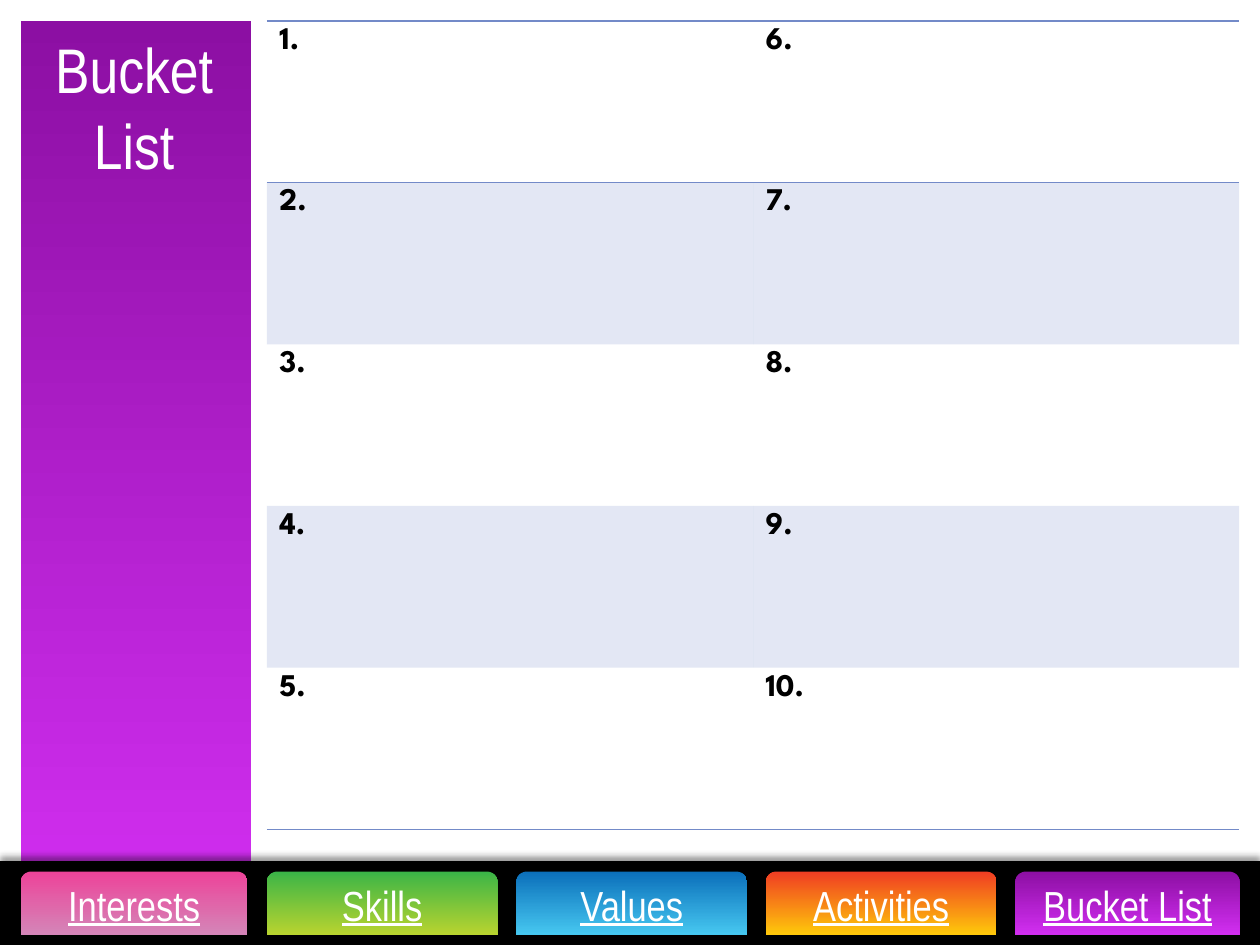
from lxml import etree
from pptx import Presentation
from pptx.dml.color import RGBColor
from pptx.enum import shapes, text
from pptx.oxml import parse_xml
from pptx.oxml.ns import nsdecls, qn
from pptx.util import Cm, Pt

BLACK = RGBColor(0x00, 0x00, 0x00)
WHITE = RGBColor(0xFF, 0xFF, 0xFF)
BLUE = RGBColor(0x73, 0x8A, 0xC8)
PURPLE = RGBColor(0x8C, 0x0F, 0xA3), RGBColor(0xD1, 0x2E, 0xF0)
PINK = RGBColor(0xED, 0x43, 0x99), RGBColor(0xD4, 0x85, 0xB8)
GREEN = RGBColor(0x3A, 0xB4, 0x47), RGBColor(0xB9, 0xD4, 0x2F)
SKY = RGBColor(0x0B, 0x6F, 0xBA), RGBColor(0x46, 0xC7, 0xF0)
ORANGE = RGBColor(0xF0, 0x3C, 0x23), RGBColor(0xFE, 0xC8, 0x0A)
NO_STYLE = "{2D5ABB26-0587-4C30-8999-92F81FD0307C}"


def add_box(kind, x, y, w, h, colors):
    """Add a borderless shape, with a downward gradient if given two colours."""
    sp = s.shapes.add_shape(kind, Cm(x), Cm(y), Cm(w), Cm(h))
    sp.shadow.inherit = False
    sp.line.fill.background()
    if len(colors) == 1:
        sp.fill.solid()
        sp.fill.fore_color.rgb = colors[0]
    else:
        sp.fill.gradient()
        sp.fill.gradient_angle = 270
        for stop, color, pos in zip(sp.fill.gradient_stops, colors, (0, 1)):
            stop.color.rgb = color
            stop.position = pos
    return sp


def write(tf, words, size, font, color):
    p = tf.paragraphs[0]
    p.text = words
    p.font.size = Pt(size)
    p.font.name = font
    p.font.color.rgb = color
    return p


prs = Presentation()
prs.slide_width, prs.slide_height = Cm(25.4), Cm(19.05)
s = prs.slides.add_slide(prs.slide_layouts[6])

# Side panel and title
add_box(shapes.MSO_SHAPE.RECTANGLE, 0.42, 0.42, 4.65, 17.78, PURPLE)
tf = s.shapes.add_textbox(Cm(0.42), Cm(0.5), Cm(4.57), Cm(3.33)).text_frame
tf.word_wrap = True
p = write(tf, "Bucket List", 36, "Arial Narrow", WHITE)
p.alignment = text.PP_ALIGN.CENTER

# Bottom bar with a shadow cast upwards
bar = add_box(shapes.MSO_SHAPE.RECTANGLE, 0, 17.36, 25.4, 1.69, [BLACK])
effects = bar._element.spPr.find(qn("a:effectLst"))
effects.append(parse_xml(
    f'<a:outerShdw {nsdecls("a")} blurRad="{Pt(4)}" dist="{Pt(3)}" dir="16200000" '
    f'rotWithShape="0"><a:srgbClr val="{BLACK}"><a:alpha val="40000"/></a:srgbClr>'
    '</a:outerShdw>'))

# Navigation tabs
tabs = [
    ("Interests", 0.42, 4.57, PINK),
    ("Skills", 5.38, 4.65, GREEN),
    ("Values", 10.41, 4.65, SKY),
    ("Activities", 15.44, 4.65, ORANGE),
    ("Bucket List", 20.47, 4.52, PURPLE),
]
for label, x, w, colors in tabs:
    sp = add_box(shapes.MSO_SHAPE.ROUND_2_SAME_RECTANGLE, x, 17.57, w, 1.27, colors)
    tf = sp.text_frame
    tf.vertical_anchor = text.MSO_ANCHOR.MIDDLE
    p = write(tf, label, 24, "Arial Narrow", WHITE)
    p.font.underline = True
    p.alignment = text.PP_ALIGN.CENTER

# Numbered table, counting down each column
ROWS, COLS = 5, 2
table = s.shapes.add_table(ROWS, COLS, Cm(5.38), Cm(0.42), Cm(19.6), Cm(16.3)).table
table.first_row = table.horz_banding = False
table._tbl.tblPr.find(qn("a:tableStyleId")).text = NO_STYLE
for row in range(ROWS):
    for col in range(COLS):
        cell = table.cell(row, col)
        p = write(cell.text_frame, f"{col * ROWS + row + 1}.", 18, "League Spartan", BLACK)
        p.font.bold = True
        # Every second row is tinted
        if row % 2:
            cell.fill.solid()
            cell.fill.fore_color.rgb = BLUE
            color = cell._tc.tcPr.find(".//" + qn("a:srgbClr"))
            etree.SubElement(color, qn("a:alpha")).set("val", "20000")
        else:
            cell.fill.background()
        # Rules around the first row and below the last
        sides = {0: ("lnT", "lnB"), ROWS - 1: ("lnB",)}.get(row, ())
        for i, side in enumerate(sides):
            cell._tc.tcPr.insert(i, parse_xml(
                f'<a:{side} {nsdecls("a")} w="{Pt(1)}"><a:solidFill>'
                f'<a:srgbClr val="{BLUE}"/></a:solidFill></a:{side}>'))

prs.save("out.pptx")
